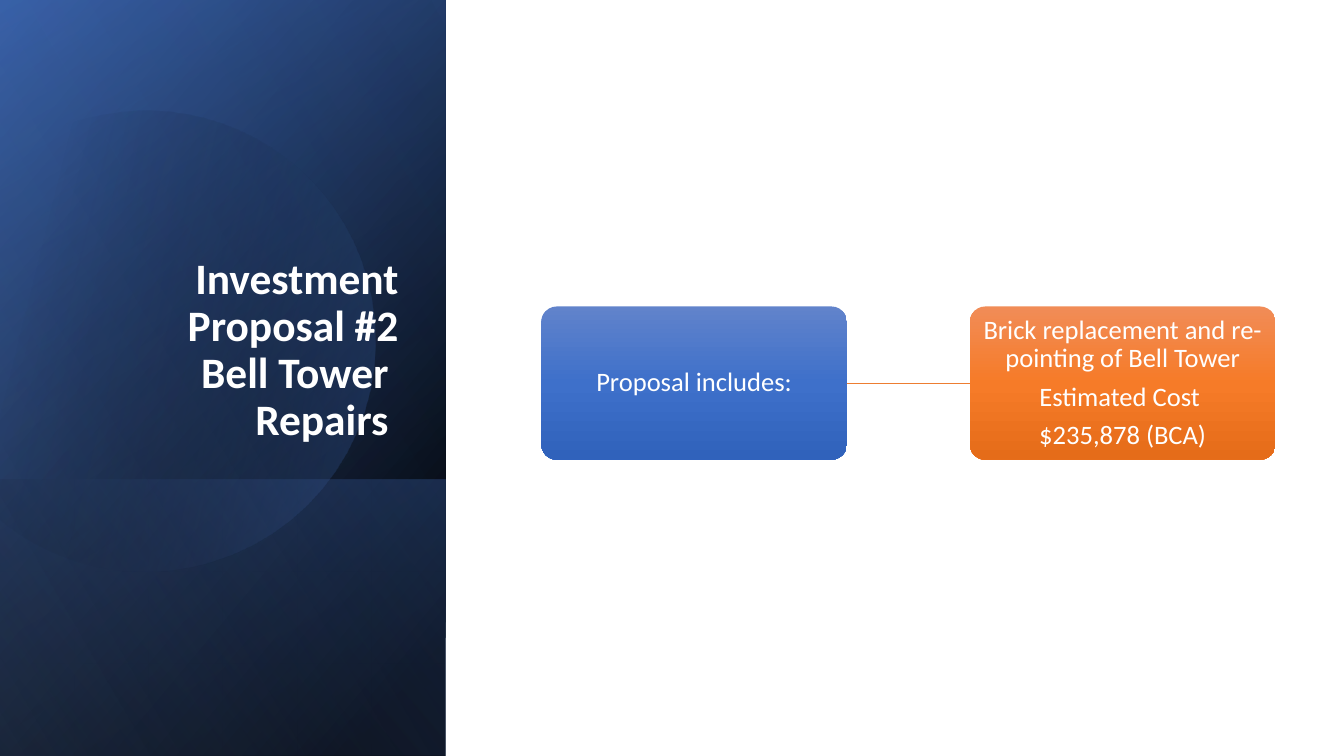
from math import cos, radians, sin

from lxml import etree
from pptx import Presentation
from pptx.dml.color import RGBColor
from pptx.enum.shapes import MSO_CONNECTOR, MSO_SHAPE
from pptx.enum.text import MSO_ANCHOR, MSO_AUTO_SIZE, PP_ALIGN
from pptx.oxml.ns import qn
from pptx.util import Inches, Pt

STRAIGHT = MSO_CONNECTOR.STRAIGHT
RECTANGLE, ROUNDED = MSO_SHAPE.RECTANGLE, MSO_SHAPE.ROUNDED_RECTANGLE
BOTTOM, MIDDLE = MSO_ANCHOR.BOTTOM, MSO_ANCHOR.MIDDLE
CENTER, RIGHT = PP_ALIGN.CENTER, PP_ALIGN.RIGHT
NO_AUTOFIT = MSO_AUTO_SIZE.NONE
SIDE_LEFT, SIDE_RIGHT = 1, 3

BLACK = RGBColor(0x00, 0x00, 0x00)
WHITE = RGBColor(0xFF, 0xFF, 0xFF)
BLUE = RGBColor(0x44, 0x72, 0xC4)
DARK_BLUE = RGBColor(0x2F, 0x55, 0x97)
LIGHT_BLUE = RGBColor(0x8F, 0xAA, 0xDC)
ORANGE = RGBColor(0xED, 0x7D, 0x31)
BLUE_SHADES = [RGBColor(0x61, 0x83, 0xCB), RGBColor(0x3E, 0x70, 0xCA), RGBColor(0x30, 0x62, 0xBB)]
ORANGE_SHADES = [RGBColor(0xF1, 0x8C, 0x57), RGBColor(0xF6, 0x7B, 0x28), RGBColor(0xE5, 0x6C, 0x19)]

# Gradient stops: position %, colour, opacity %
PANEL = (-1.54, 1.54, 7.5, 4.42)
BASE_STOPS = [(8, BLACK, 100), (100, DARK_BLUE, 100)]
GLOW_STOPS = [(0, BLACK, 0), (99, BLUE, 46)]
FOOT_STOPS = [(2, BLUE, 29), (100, BLACK, 30)]
CIRCLE_STOPS = [(29, BLACK, 0), (100, BLUE, 43)]
SHEEN_STOPS = [(0, BLACK, 0), (99, LIGHT_BLUE, 11)]

# Clipped circle: Bezier segments as they lie on the slide, after its tilt
CIRCLE_TILT = -16.1
CIRCLE_CENTER = (1.59, 3.35)
CIRCLE_START = (1.49, 1.1)
CIRCLE_CURVES = [
    [(2.46, 1.12), (3.35, 1.77), (3.63, 2.75)],
    [(3.98, 3.97), (3.28, 5.23), (2.07, 5.58)],
    [(1.31, 5.8), (0.53, 5.61), (-0.03, 5.14)],
    [(-0.03, 5.14), (-0.15, 5.03), (-0.15, 5.03)],
    [(-0.15, 5.03), (-0.15, 1.75), (-0.15, 1.75)],
    [(-0.15, 1.75), (0, 1.61), (0, 1.61)],
    [(0.23, 1.42), (0.5, 1.28), (0.8, 1.19)],
    [(1.03, 1.13), (1.26, 1.1), (1.49, 1.1)],
]


def curve_points(start, curves, steps=16):
    points = [start]
    for first, second, end in curves:
        for step in range(1, steps + 1):
            t = step / steps
            weights = ((1 - t) ** 3, 3 * t * (1 - t) ** 2, 3 * t * t * (1 - t), t ** 3)
            corners = (start, first, second, end)
            points.append(tuple(sum(w * c[axis] for w, c in zip(weights, corners)) for axis in (0, 1)))
        start = end
    return points


def rotate(point, center, degrees):
    angle = radians(degrees)
    dx, dy = point[0] - center[0], point[1] - center[1]
    return (center[0] + dx * cos(angle) - dy * sin(angle),
            center[1] + dx * sin(angle) + dy * cos(angle))


class SlideBuilder:
    font_name = "Calibri"

    def __init__(self, slide):
        self.slide = slide
        self.shapes = slide.shapes

    def paint(self, shape, stops, angle):
        shape.shadow.inherit = False
        shape.line.fill.background()
        shape.fill.background()
        properties = shape._element.spPr
        gradient = etree.Element(qn("a:gradFill"), rotWithShape="1")
        stop_list = etree.SubElement(gradient, qn("a:gsLst"))
        for position, color, opacity in stops:
            stop = etree.SubElement(stop_list, qn("a:gs"), pos=str(position * 1000))
            paint = etree.SubElement(stop, qn("a:srgbClr"), val=str(color))
            if opacity < 100:
                etree.SubElement(paint, qn("a:alpha"), val=str(opacity * 1000))
        etree.SubElement(gradient, qn("a:lin"), ang=str(angle * 60000), scaled="0")
        properties.replace(properties.find(qn("a:noFill")), gradient)

    def panel(self, box, stops, angle):
        shape = self.shapes.add_shape(RECTANGLE, *map(Inches, box))
        shape.rotation = 90
        shape._element.spPr.find(qn("a:xfrm")).set("flipH", "1")
        self.paint(shape, stops, angle)

    def outline(self, points, center, tilt, stops, angle):
        upright = [tuple(map(Inches, rotate(point, center, -tilt))) for point in points]
        builder = self.shapes.build_freeform(*upright[0])
        builder.add_line_segments(upright[1:], close=True)
        shape = builder.convert_to_shape()
        shape.rotation = tilt
        self.paint(shape, stops, angle)

    def set_text(self, shape, lines, frame_format, paragraph_format, size, bold=False):
        frame = shape.text_frame
        for name, value in frame_format.items():
            setattr(frame, name, value)
        frame.text = "\n".join(lines)
        font_format = {"name": self.font_name, "size": Pt(size), "bold": bold}
        for paragraph in frame.paragraphs:
            for name, value in paragraph_format.items():
                setattr(paragraph, name, value)
            for run in paragraph.runs:
                run.font.color.rgb = WHITE
                for name, value in font_format.items():
                    setattr(run.font, name, value)

    def title(self, text, box):
        title = self.shapes.title
        title.left, title.top, title.width, title.height = map(Inches, box)
        frame_format = {"word_wrap": True, "auto_size": NO_AUTOFIT, "vertical_anchor": BOTTOM}
        self.set_text(title, [text], frame_format, {"alignment": RIGHT, "line_spacing": 0.9}, 31, True)
        # Bring the title in front of the panels
        title._element.getparent().append(title._element)

    def card(self, box, shades, lines):
        shape = self.shapes.add_shape(ROUNDED, *map(Inches, box))
        shape.adjustments[0] = 0.1
        self.paint(shape, [(at, shade, 100) for at, shade in zip((0, 50, 100), shades)], 90)
        frame_format = {"word_wrap": True, "vertical_anchor": MIDDLE}
        for side in ("left", "right", "top", "bottom"):
            frame_format["margin_" + side] = Inches(0.05)
        paragraph_format = {"alignment": CENTER, "line_spacing": 0.9, "space_after": Pt(6.65)}
        self.set_text(shape, lines, frame_format, paragraph_format, 19)
        return shape

    def link(self, start, end):
        connector = self.shapes.add_connector(STRAIGHT, 0, 0, 0, 0)
        connector.begin_connect(start, SIDE_RIGHT)
        connector.end_connect(end, SIDE_LEFT)
        connector.line.color.rgb = ORANGE
        connector.line.width = Pt(0.5)
        etree.SubElement(connector._element.spPr, qn("a:effectLst"))


def main():
    presentation = Presentation()
    presentation.slide_width, presentation.slide_height = Inches(13.33), Inches(7.5)
    builder = SlideBuilder(presentation.slides.add_slide(presentation.slide_layouts[5]))

    # Layered blue side panel
    builder.panel(PANEL, BASE_STOPS, 50)
    builder.panel(PANEL, GLOW_STOPS, 30)
    builder.panel((0.84, 3.92, 2.74, 4.42), FOOT_STOPS, 130)
    builder.outline(curve_points(CIRCLE_START, CIRCLE_CURVES), CIRCLE_CENTER, CIRCLE_TILT, CIRCLE_STOPS, 30)
    builder.panel(PANEL, SHEEN_STOPS, 120)

    # Title
    builder.title("Investment Proposal #2\vBell Tower  Repairs ", (0.64, 1.84, 3.41, 2.62))

    # Proposal and its contents
    proposal = builder.card((5.37, 3.04, 3.03, 1.52), BLUE_SHADES, ["Proposal includes:"])
    contents = builder.card((9.62, 3.04, 3.03, 1.52), ORANGE_SHADES, [
        "Brick replacement and re-pointing of Bell Tower", "Estimated Cost ", "$235,878 (BCA)"])
    builder.link(proposal, contents)

    presentation.save("out.pptx")


if __name__ == "__main__":
    main()
